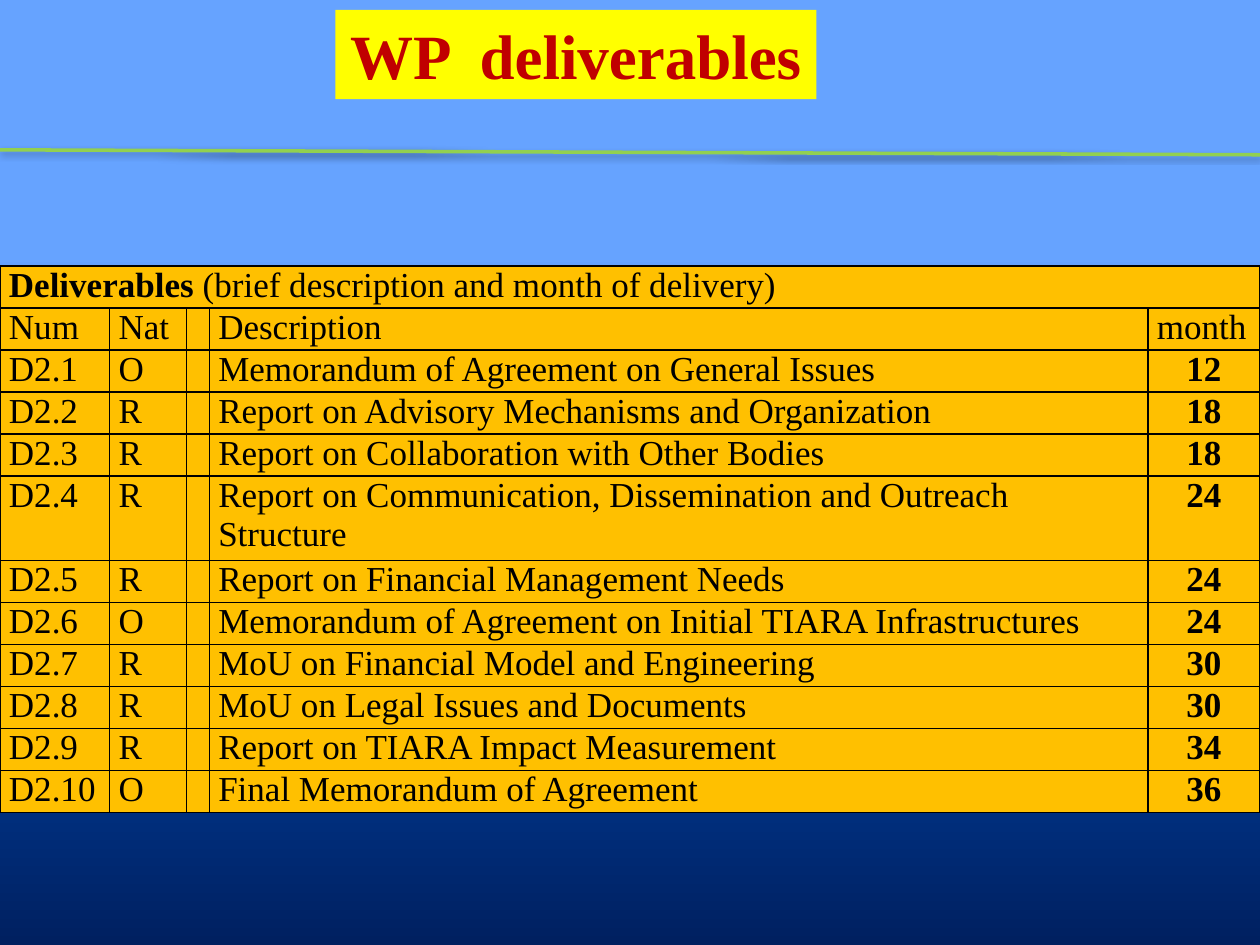
import pptx
import pptx.util
import pptx.dml.color
import pptx.enum.shapes
import pptx.enum.text
import pptx.oxml
import pptx.oxml.ns
import lxml.etree

Cm, Pt = pptx.util.Cm, pptx.util.Pt
RGB = pptx.dml.color.RGBColor
ALIGN = pptx.enum.text.PP_ALIGN
qn = pptx.oxml.ns.qn
SKY = RGB(0x66, 0xA3, 0xFF)
BLUE = RGB(0x00, 0x45, 0xAD)
NAVY = RGB(0x00, 0x20, 0x60)
GREEN = RGB(0x92, 0xD0, 0x50)
YELLOW = RGB(0xFF, 0xFF, 0x00)
RED = RGB(0xC0, 0x00, 0x00)
AMBER = RGB(0xFF, 0xC0, 0x00)
BLACK = RGB(0, 0, 0)


def style(item, **vals):
    for key, val in vals.items():
        setattr(item, key, val)


def write(para, text, size, color, bold):
    run = para.add_run()
    run.text = text
    style(run.font, name="Times New Roman", size=Pt(size), bold=bold)
    run.font.color.rgb = color


deck = pptx.Presentation()
style(deck, slide_width=Cm(25.4), slide_height=Cm(19.05))
slide = deck.slides.add_slide(deck.slide_layouts[6])

# Background gradient, top to bottom
back = slide.background.fill
back.gradient()
back.gradient_angle = 270
stops = slide.element.find(".//" + qn("a:gsLst"))
stops.clear()
for place, color in ((27, SKY), (64, BLUE), (100, NAVY)):
    stop = lxml.etree.SubElement(stops, qn("a:gs"), pos=str(place * 1000))
    lxml.etree.SubElement(stop, qn("a:srgbClr"), val=str(color))

# Green rule with a soft shadow
rule = slide.shapes.add_connector(
    pptx.enum.shapes.MSO_CONNECTOR.STRAIGHT, Cm(25.4), Cm(3.12), Cm(0), Cm(3.02))
rule.line.color.rgb = GREEN
rule.line.width = Pt(2)
space = pptx.oxml.ns.nsdecls("a")
rule.element.spPr.append(pptx.oxml.parse_xml(
    f'<a:effectLst {space}><a:outerShdw blurRad="{Pt(3.1)}" dist="{Pt(1.6)}" '
    'dir="5400000" rotWithShape="0"><a:srgbClr val="000000">'
    '<a:alpha val="38000"/></a:srgbClr></a:outerShdw></a:effectLst>'))

# Title
title = slide.shapes.add_textbox(Cm(6.76), Cm(0.2), Cm(9.7), Cm(1.8))
title.fill.solid()
title.fill.fore_color.rgb = YELLOW
style(title.text_frame, word_wrap=False,
      auto_size=pptx.enum.text.MSO_AUTO_SIZE.SHAPE_TO_FIT_TEXT)
para = title.text_frame.paragraphs[0]
para.alignment = ALIGN.CENTER
write(para, "WP  deliverables", 36, RED, True)

# Deliverables table
rows = [
    ("Num", "Nat", "Description", "month"),
    ("D2.1", "O", "Memorandum of Agreement on General Issues", "12"),
    ("D2.2", "R", "Report on Advisory Mechanisms and Organization", "18"),
    ("D2.3", "R", "Report on Collaboration with Other Bodies", "18"),
    ("D2.4", "R", "Report on Communication, Dissemination and Outreach Structure", "24"),
    ("D2.5", "R", "Report on Financial Management Needs", "24"),
    ("D2.6", "O", "Memorandum of Agreement on Initial TIARA Infrastructures", "24"),
    ("D2.7", "R", "MoU on Financial Model and Engineering", "30"),
    ("D2.8", "R", "MoU on Legal Issues and Documents", "30"),
    ("D2.9", "R", "Report on TIARA Impact Measurement", "34"),
    ("D2.10", "O", "Final Memorandum of Agreement", "36"),
]
wides = (2.21, 1.55, 0.46, 18.92, 2.26)
high = 11 / 13  # twelve rows, one of them two lines tall
table = slide.shapes.add_table(
    len(rows) + 1, len(wides), Cm(0), Cm(5.36), Cm(25.4), Cm(11)).table
style(table, first_row=False, horz_banding=False)
for col, wide in zip(table.columns, wides):
    col.width = Cm(wide)
for row in table.rows:
    row.height = Cm(high)
table.rows[5].height = Cm(2 * high)

# Cell fill, margins and borders
for cell in table.iter_cells():
    style(cell, margin_left=Cm(0.18), margin_right=Cm(0.18),
          margin_top=0, margin_bottom=0)
    cell.fill.solid()
    cell.fill.fore_color.rgb = AMBER
    props = cell._tc.get_or_add_tcPr()
    for spot, side in enumerate("LRTB"):
        props.insert(spot, pptx.oxml.parse_xml(
            f'<a:ln{side} {space} w="{Pt(1)}"><a:solidFill>'
            f'<a:srgbClr val="{BLACK}"/></a:solidFill></a:ln{side}>'))

# Heading across all columns
head = table.cell(0, 0)
head.merge(table.cell(0, 4))
para = head.text_frame.paragraphs[0]
write(para, "Deliverables ", 20, BLACK, True)
write(para, "(brief description and month of delivery)", 20, BLACK, False)

# Cell text; the narrow third column stays empty
for down, row in enumerate(rows, 1):
    for across, text in zip((0, 1, 3, 4), row):
        para = table.cell(down, across).text_frame.paragraphs[0]
        month = across == 4 and down > 1
        para.alignment = ALIGN.CENTER if month else ALIGN.LEFT
        write(para, text, 20, BLACK, month)

deck.save("out.pptx")
